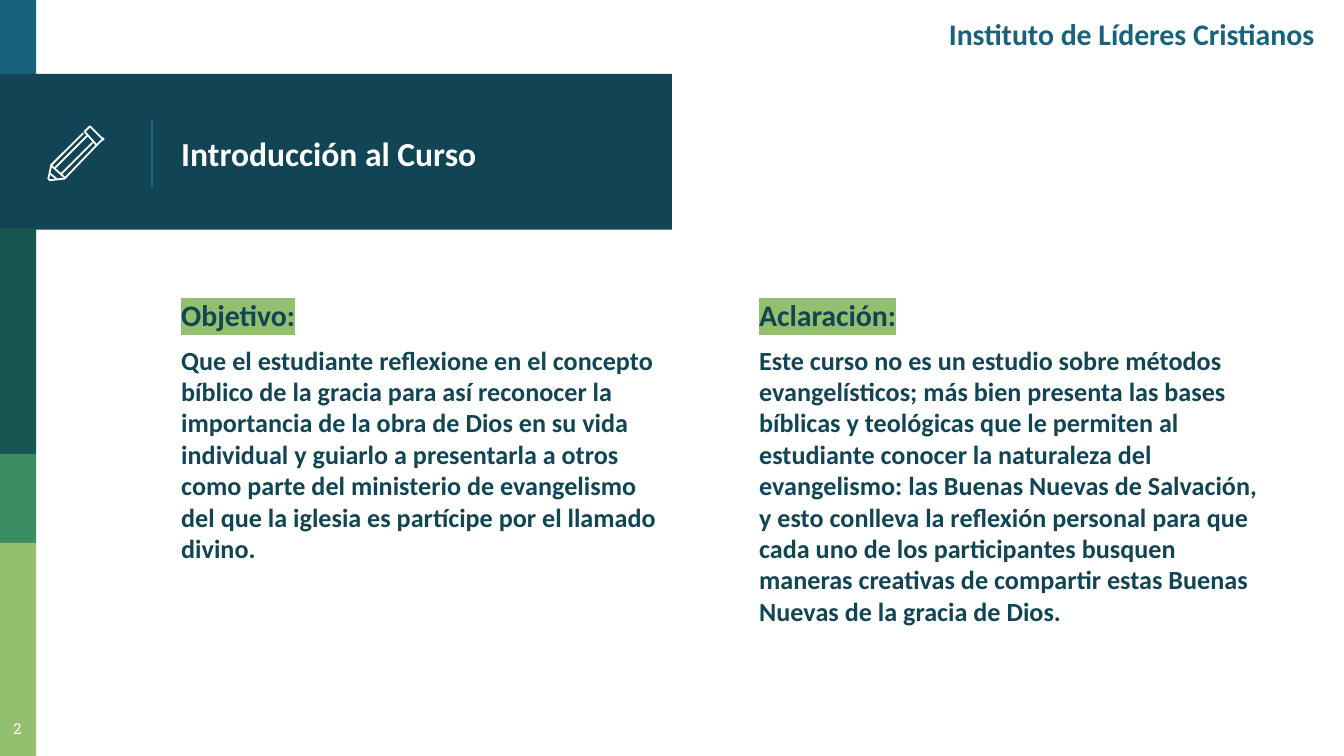
from lxml.etree import SubElement
from pptx import Presentation
from pptx.dml.color import RGBColor
from pptx.enum.shapes import MSO_CONNECTOR as CONN, MSO_SHAPE as SHAPE
from pptx.enum.text import MSO_ANCHOR as ANCHOR, PP_ALIGN as ALIGN
from pptx.oxml import parse_xml
from pptx.oxml.ns import nsdecls, qn
from pptx.util import Inches, Pt

NAVY, BLUE, LIME, WHITE = "114454", "18637B", "94BF6E", "FFFFFF"
BANDS = [
    (0, 0.27, 0.58, BLUE),
    (0.55, 5, 1.16, NAVY),
    (1.7, 0.27, 1.68, "165751"),
    (3.38, 0.27, 0.66, "3B8D61"),
    (4.04, 0.27, 1.59, LIME),
]
PENCIL = [
    ([(76, 103), (68, 95), (67, 94), (66, 95), (63, 98), (72, 108),
      (76, 104), (77, 104), (77, 103)], True),
    ([(69, 106), (45, 130)], False),
    ([(62, 99), (38, 123), (38, 124), (36, 133), (37, 134), (38, 134),
      (47, 133), (48, 133), (72, 108)], False),
    ([(41, 125), (65, 101)], False),
    ([(42, 133), (37, 129)], False),
    ([(38, 123), (48, 132)], False),
]
COLUMNS = [
    (1.25, 3.78, "Objetivo:",
     "Que el estudiante reflexione en el concepto bíblico de la gracia para así "
     "reconocer la importancia de la obra de Dios en su vida individual y guiarlo "
     "a presentarla a otros como parte del ministerio de evangelismo del que la "
     "iglesia es partícipe por el llamado divino."),
    (5.55, 3.95, "Aclaración:",
     "Este curso no es un estudio sobre métodos evangelísticos; más bien presenta "
     "las bases bíblicas y teológicas que le permiten al estudiante conocer la "
     "naturaleza del evangelismo: las Buenas Nuevas de Salvación, y esto conlleva "
     "la reflexión personal para que cada uno de los participantes busquen maneras "
     "creativas de compartir estas Buenas Nuevas de la gracia de Dios."),
]


def rgb(color):
    """Turn a hex string into a colour."""
    return RGBColor.from_string(color)


class Deck:
    """Holds the text style and the current slide, and draws elements on it."""

    def __init__(self, slide, font="Calibri"):
        self.slide = slide
        self.style = {"name": font, "bold": True}

    def band(self, x, y, w, h, color):
        """Draw a filled rectangle."""
        sp = self.slide.shapes.add_shape(
            SHAPE.RECTANGLE, Inches(x), Inches(y), Inches(w), Inches(h))
        sp.shadow.inherit = False
        sp.fill.solid()
        sp.fill.fore_color.rgb = rgb(color)
        sp.line.fill.background()

    def rule(self, x1, y1, x2, y2, color, width):
        """Draw a straight line."""
        sp = self.slide.shapes.add_connector(
            CONN.STRAIGHT, Inches(x1), Inches(y1), Inches(x2), Inches(y2))
        SubElement(sp._element.spPr, qn("a:effectLst"))
        sp.line.color.rgb = rgb(color)
        sp.line.width = Pt(width)

    def stroke(self, points, close, color, width):
        """Draw an unfilled outline from points in hundredths of an inch."""
        builder = self.slide.shapes.build_freeform(*points[0], scale=Inches(0.01))
        builder.add_line_segments(points[1:], close=close)
        sp = builder.convert_to_shape()
        sp.shadow.inherit = False
        sp.fill.background()
        sp.line.color.rgb = rgb(color)
        sp.line.width = Pt(width)

    def text(self, x, y, w, h, paragraphs, anchor=ANCHOR.TOP,
             align=ALIGN.LEFT, top=0.1):
        """Write paragraphs given as (text, size, colour, extra format)."""
        tf = self.slide.shapes.add_textbox(
            Inches(x), Inches(y), Inches(w), Inches(h)).text_frame
        frame = {"word_wrap": True, "vertical_anchor": anchor,
                 "margin_left": Inches(0.1), "margin_right": Inches(0.1),
                 "margin_top": Inches(top), "margin_bottom": Inches(0.1)}
        for key, value in frame.items():
            setattr(tf, key, value)
        for i, (text, size, color, extra) in enumerate(paragraphs):
            p = tf.add_paragraph() if i else tf.paragraphs[0]
            p.alignment = align
            if i:
                p.space_before = Pt(6)
            r = p.add_run()
            r.text = text
            fmt = {**self.style, "size": Pt(size), **extra}
            highlight = fmt.pop("highlight", None)
            for key, value in fmt.items():
                setattr(r.font, key, value)
            r.font.color.rgb = rgb(color)
            if highlight:
                self.highlight(r, highlight)

    def highlight(self, r, color):
        """Mark a run with a background colour."""
        mark = parse_xml(f'<a:highlight {nsdecls("a")}>'
                         f'<a:srgbClr val="{color}"/></a:highlight>')
        r._r.get_or_add_rPr().find(qn("a:solidFill")).addnext(mark)


def main():
    """Build the course introduction slide."""
    prs = Presentation()
    prs.slide_width, prs.slide_height = Inches(10), Inches(10 * 9 / 16)
    s = prs.slides.add_slide(prs.slide_layouts[6])
    deck = Deck(s)
    for y, w, h, color in BANDS:
        deck.band(0, y, w, h, color)
    deck.rule(1.13, 0.89, 1.13, 1.4, BLUE, 0.75)
    deck.text(1.25, 0.58, 3.51, 1.12,
              [("Introducción al Curso", 18, WHITE, {})], ANCHOR.MIDDLE)
    for points, close in PENCIL:
        deck.stroke(points, close, WHITE, 0.96)
    for x, w, heading, body in COLUMNS:
        deck.text(x, 2.11, w, 2.09, [(heading, 16, NAVY, {"highlight": LIME}),
                                     (body, 14, NAVY, {})])
    deck.text(-0.06, 5.27, 0.38, 0.35,
              [("2", 8, WHITE, {"name": "Roboto Slab", "bold": False})],
              align=ALIGN.CENTER, top=0.13)
    deck.text(6.18, 0.08, 3.7, 0.61,
              [("Instituto de Líderes Cristianos", 16, BLUE, {})],
              align=ALIGN.RIGHT, top=0.04)
    prs.save("out.pptx")


if __name__ == "__main__":
    main()
